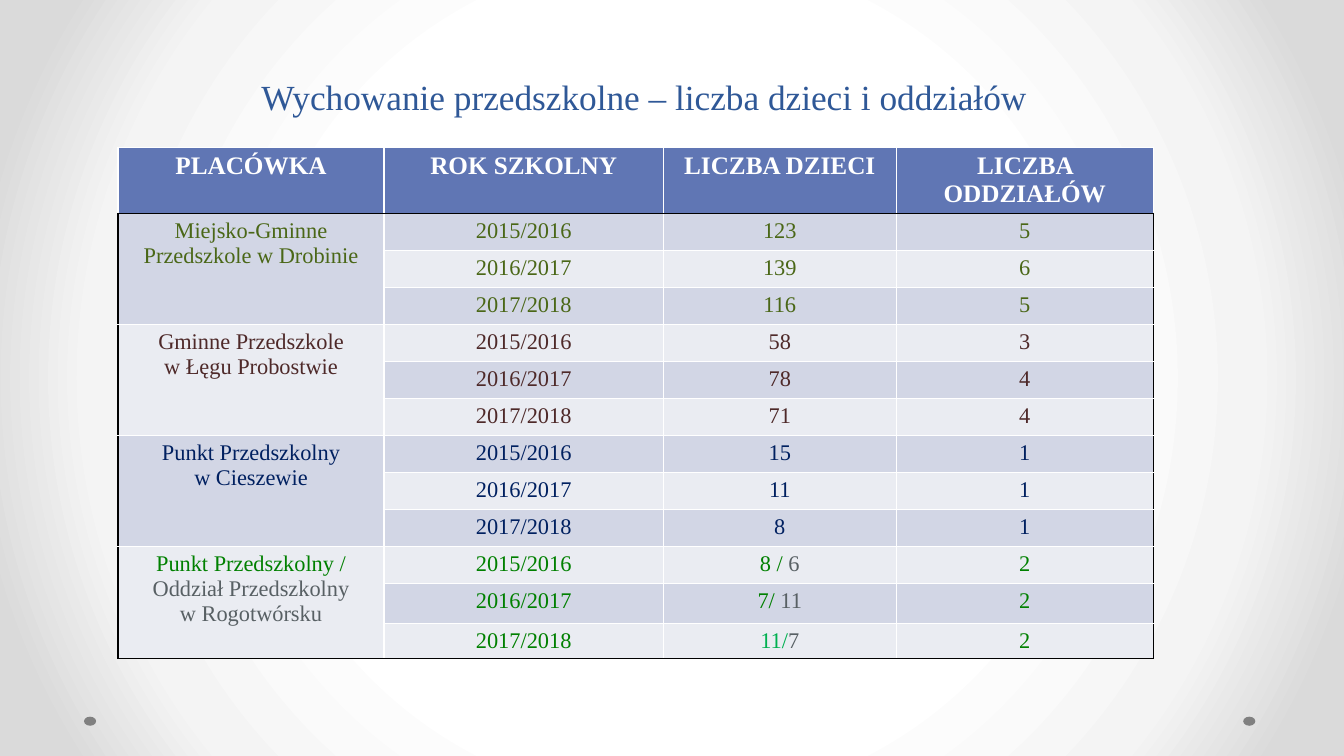
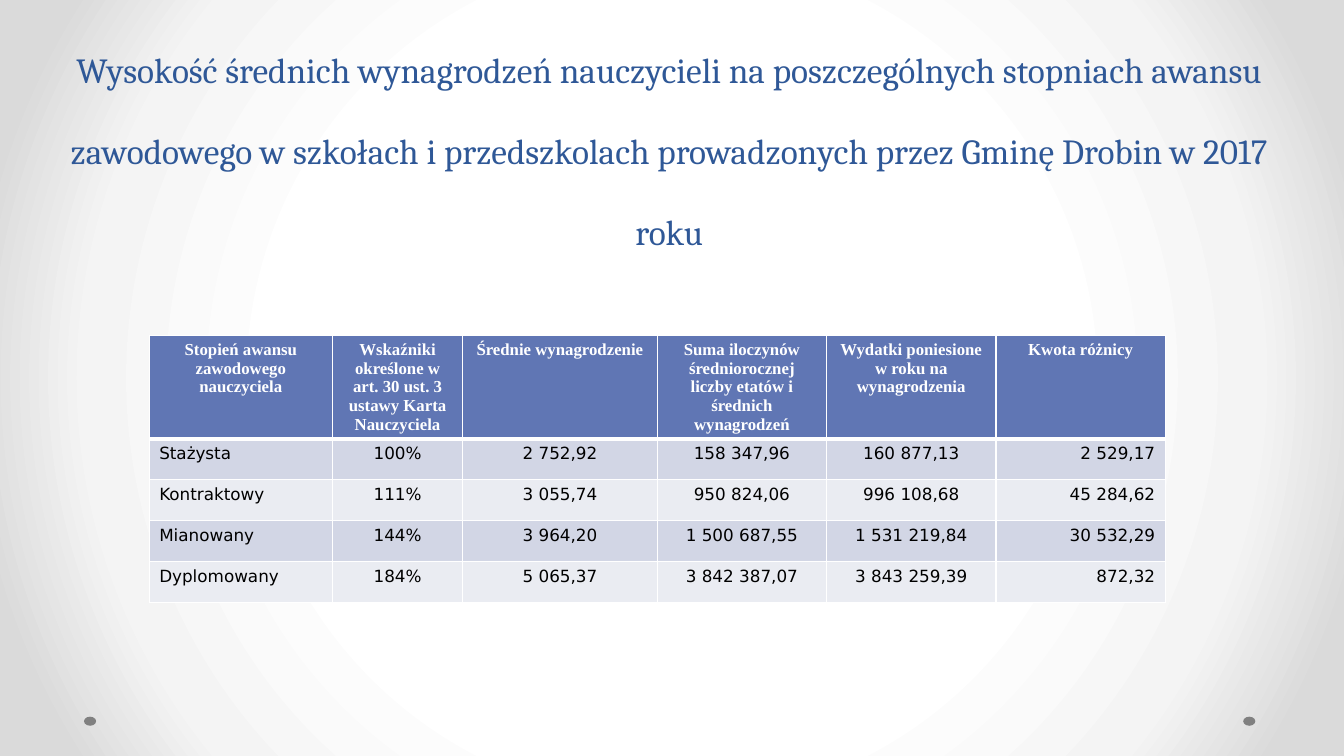
import pptx
import pptx.dml.color
import pptx.enum.shapes
import pptx.enum.text
import pptx.oxml
import pptx.util

NS = 'xmlns:a="http://schemas.openxmlformats.org/drawingml/2006/main"'
WHITE, BLACK = "FFFFFF", "000000"
TITLE_BLUE, HEADER_BLUE = "2F5897", "6076B4"
BANDS = ["EAECF2", "D2D6E5"]
GREEN, GRAY = "008000", "586064"
LEFT, CENTER, RIGHT = (
    pptx.enum.text.PP_ALIGN.LEFT,
    pptx.enum.text.PP_ALIGN.CENTER,
    pptx.enum.text.PP_ALIGN.RIGHT,
)


def rgb(value):
    return pptx.dml.color.RGBColor.from_string(value)


def fill_cell(cell, paragraphs, fill, edges, font, size, bold, align):
    tcPr = cell._tc.get_or_add_tcPr()
    for side, (color, width) in edges.items():
        tcPr.append(pptx.oxml.parse_xml(
            f'<a:ln{side} {NS} w="{width * 12700}"><a:solidFill>'
            f'<a:srgbClr val="{color}"/></a:solidFill></a:ln{side}>'))
    cell.fill.solid()
    cell.fill.fore_color.rgb = rgb(fill)
    tf = cell.text_frame
    for i, runs in enumerate(paragraphs):
        p = tf.add_paragraph() if i else tf.paragraphs[0]
        p.alignment = align
        p.font.name, p.font.size, p.font.bold = font, pptx.util.Pt(size), bold
        for text, color in runs:
            r = p.add_run()
            r.text = text
            r.font.color.rgb = rgb(color)


prs = pptx.Presentation()
prs.slide_width = pptx.util.Inches(13.33)
prs.slide_height = pptx.util.Inches(7.5)
col, row = prs.slide_width / 100, prs.slide_height / 100
units = [col, row, col, row]

master = prs.slide_master
master.background.fill.gradient()
grad = next(master.element.iter("{*}gradFill"))
stops = "".join(
    f'<a:gs pos="{pos}000"><a:srgbClr val="{color}"/></a:gs>'
    for pos, color in [(50, WHITE), (76, "F4F4F4"), (92, "DADADA")])
grad.getparent().replace(grad, pptx.oxml.parse_xml(
    f'<a:gradFill {NS} rotWithShape="1"><a:gsLst>{stops}</a:gsLst>'
    '<a:path path="circle"><a:fillToRect l="50000" t="50000" r="50000" b="50000"/>'
    '</a:path></a:gradFill>'))

groups = [
    ("4A6717", [[("Miejsko-Gminne", "4A6717")], [("Przedszkole w Drobinie", "4A6717")]],
     [("123", "5"), ("139", "6"), ("116", "5")]),
    ("4E2929", [[("Gminne Przedszkole", "4E2929")], [("w Łęgu Probostwie", "4E2929")]],
     [("58", "3"), ("78", "4"), ("71", "4")]),
    ("002060", [[("Punkt Przedszkolny", "002060")], [("w Cieszewie", "002060")]],
     [("15", "1"), ("11", "1"), ("8", "1")]),
    (GREEN, [[("Punkt Przedszkolny /", GREEN)], [("Oddział Przedszkolny", GRAY)],
             [("w Rogotwórsku", GRAY)]],
     [([("8 / ", GREEN), ("6", GRAY)], "2"),
      ([("7/", GREEN), (" 11", GRAY)], "2"),
      ([("11/", "00B050"), ("7", GRAY)], "2")]),
]
kindergartens = [[[[(text, WHITE)]] for text in
                  ["PLACÓWKA", "ROK SZKOLNY", "LICZBA DZIECI", "LICZBA ODDZIAŁÓW"]]]
for color, name, counts in groups:
    for i, (children, classes) in enumerate(counts):
        runs = [(children, color)] if isinstance(children, str) else children
        year = f"{2015 + i}/{2016 + i}"
        kindergartens.append(
            [None if i else name, [[(year, color)]], [runs], [[(classes, color)]]])

pay = [
    ["Stopień awansu zawodowego nauczyciela",
     "Wskaźniki określone w art. 30 ust. 3 ustawy Karta Nauczyciela",
     "Średnie wynagrodzenie",
     "Suma iloczynów średniorocznej liczby etatów i średnich wynagrodzeń",
     "Wydatki poniesione w roku na wynagrodzenia",
     "Kwota różnicy"],
    ["Stażysta", "100%", "2 752,92", "158 347,96", "160 877,13", "2 529,17"],
    ["Kontraktowy", "111%", "3 055,74", "950 824,06", "996 108,68", "45 284,62"],
    ["Mianowany", "144%", "3 964,20", "1 500 687,55", "1 531 219,84", "30 532,29"],
    ["Dyplomowany", "184%", "5 065,37", "3 842 387,07", "3 843 259,39", "872,32"],
]
salaries = [[[[(text, BLACK if r else WHITE)]] for text in line]
            for r, line in enumerate(pay)]

pages = [
    dict(title="Wychowanie przedszkolne – liczba dzieci i oddziałów",
         title_font="Times New Roman", box=[6.83, 6.27, 70.52, 10], inset=11.7,
         corner=[8.78, 19.47], widths=[19.8, 20.78, 17.33, 19.13],
         heights=[7.2] + [4.9] * 10 + [5.33, 4.27], cells=kindergartens,
         span=3, frame=BLACK, rule=(BLACK, 1),
         body_font="Times New Roman", header_size=18, body_size=16,
         aligns=[CENTER] * 4),
    dict(title="Wysokość średnich wynagrodzeń nauczycieli na poszczególnych stopniach "
               "awansu zawodowego w szkołach i przedszkolach prowadzonych przez "
               "Gminę Drobin w 2017 roku",
         title_font="Cambria", box=[4.8, 10.93, 90, 23.2], inset=0,
         corner=[11.1, 44.4], widths=[13.65, 9.68, 14.48] + [12.6] * 3,
         heights=[5.4] * 5, cells=salaries,
         span=1, frame=WHITE, rule=(WHITE, 3),
         body_font="DejaVu Sans", header_size=12, body_size=12,
         aligns=[LEFT] + [CENTER] * 4 + [RIGHT]),
]

for page in pages:
    s = prs.slides.add_slide(prs.slide_layouts[5])
    sp = s.shapes.title
    sp.left, sp.top, sp.width, sp.height = [round(n * u) for n, u in zip(page["box"], units)]
    tf = sp.text_frame
    tf.text = page["title"]
    tf.word_wrap = True
    tf.auto_size = pptx.enum.text.MSO_AUTO_SIZE.NONE
    tf.vertical_anchor = pptx.enum.text.MSO_ANCHOR.BOTTOM
    tf.margin_left, tf.margin_right = round(page["inset"] * col), 0
    p = tf.paragraphs[0]
    p.alignment = CENTER
    p.line_spacing = pptx.util.Pt(58)
    p.font.name, p.font.size = page["title_font"], pptx.util.Pt(25.2)
    p.font.color.rgb = rgb(TITLE_BLUE)

    widths, heights, span = page["widths"], page["heights"], page["span"]
    at = page["corner"] + [sum(widths), sum(heights)]
    table = s.shapes.add_table(
        len(heights), len(widths), *[round(n * u) for n, u in zip(at, units)]).table
    for column, width in zip(table.columns, widths):
        column.width = round(width * col)
    for line, height in zip(table.rows, heights):
        line.height = round(height * row)

    white, frame = (WHITE, 1), (page["frame"], 1)
    for r, line in enumerate(page["cells"]):
        for c, paragraphs in enumerate(line):
            cell = table.cell(r, c)
            depth = span if r and c == 0 else 1
            if paragraphs and depth > 1:
                cell.merge(table.cell(r + depth - 1, c))
            last = r + depth >= len(heights)
            edges = {
                "L": frame if r and c == 0 else white,
                "R": frame if r and c == len(widths) - 1 else white,
                "T": page["rule"] if r == 1 else white,
                "B": page["rule"] if r == 0 else frame if last else white,
            }
            fill_cell(cell, paragraphs or [], BANDS[r % 2] if r else HEADER_BLUE, edges,
                      page["body_font"] if r else "Times New Roman",
                      page["body_size"] if r else page["header_size"],
                      r == 0, page["aligns"][c] if r else CENTER)

for x in [92.5, 6.25]:
    dot = [round(n * u) for n, u in zip([x, 94.8, 0.9, 1.2], units)]
    sp = s.shapes.add_shape(pptx.enum.shapes.MSO_SHAPE.OVAL, *dot)
    sp.shadow.inherit = False
    sp.fill.solid()
    sp.fill.fore_color.rgb = rgb("808080")
    sp.line.fill.background()
    master.shapes.element.append(sp.element)

prs.save("out.pptx")
